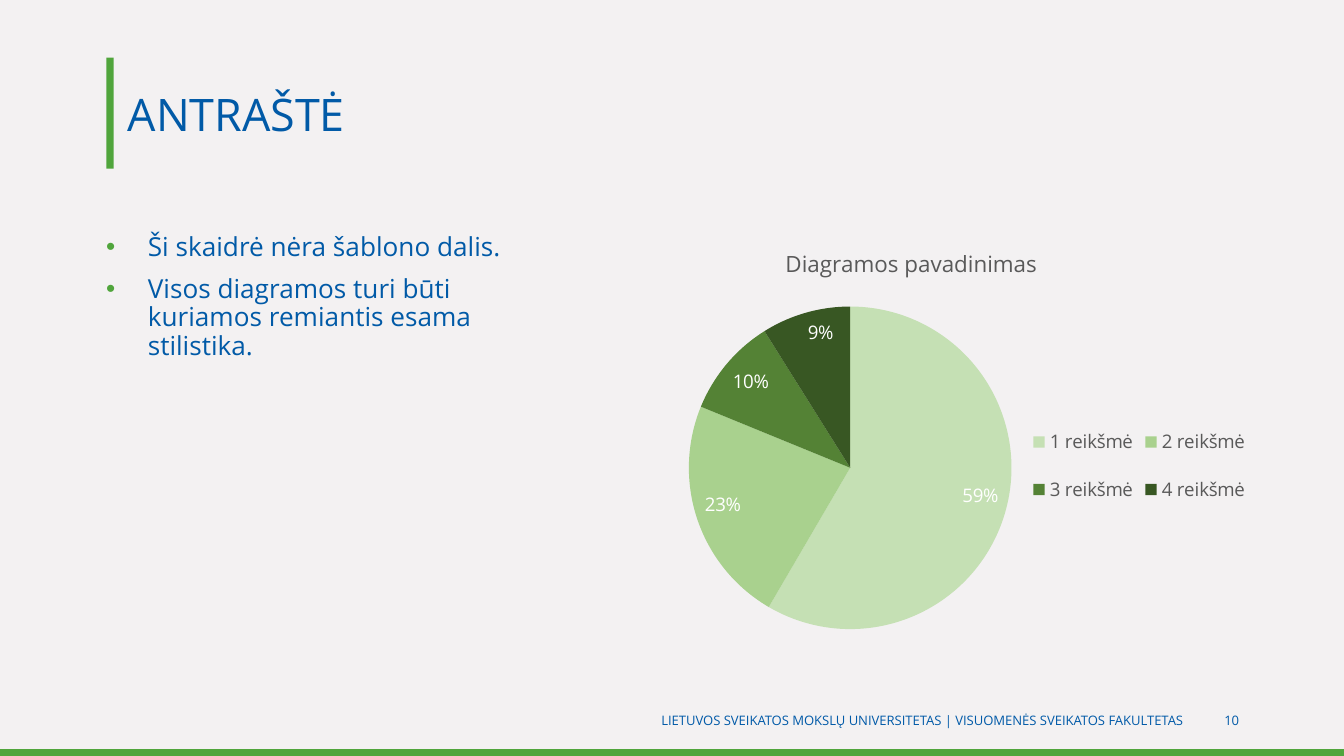
from lxml import etree
from pptx import Presentation
from pptx import util as u
from pptx.chart.data import CategoryChartData
from pptx.dml.color import RGBColor
from pptx.enum import chart as charts, shapes, text
from pptx.oxml import parse_xml
from pptx.oxml.ns import nsdecls, qn

COLORS = {
    "page": "F3F1F2", "green": "50A53C", "blue": "015AA7",
    "footer": "015AA8", "gray": "595959", "white": "FFFFFF",
}
SLICES = {
    "1 reikšmė": (59, "C5E0B4"),
    "2 reikšmė": (23, "A9D18E"),
    "3 reikšmė": (10, "548235"),
    "4 reikšmė": (9, "385723"),
}
CHART_TITLE = "Diagramos pavadinimas"


def paint(fill, color):
    fill.solid()
    fill.fore_color.rgb = RGBColor.from_string(color)


def style_font(font, size, color):
    font.name = "Open Sans"
    font.size = u.Pt(size)
    font.bold = False
    font.color.rgb = RGBColor.from_string(color)


def write(box, lines, size, color, align=text.PP_ALIGN.LEFT,
          anchor=text.MSO_ANCHOR.MIDDLE, bullet=None, gap=0, spacing=None):
    """Fill a box with one paragraph for each line."""
    frame = box.text_frame
    frame.word_wrap = True
    frame.auto_size = text.MSO_AUTO_SIZE.NONE
    frame.vertical_anchor = anchor
    for index, line in enumerate(lines):
        para = frame.add_paragraph() if index else frame.paragraphs[0]
        para.alignment = align
        para.space_before = u.Pt(gap if index else 0)
        if spacing:
            para.line_spacing = spacing
        if bullet:
            add_bullet(para, bullet)
        span = para.add_run()
        span.text = line
        style_font(span.font, size, color)


def add_bullet(para, color):
    props = para._p.get_or_add_pPr()
    indent = u.Cm(0.79)
    props.set("marL", str(indent))
    props.set("indent", str(-indent))
    mark = etree.SubElement(props, qn("a:buClr"))
    etree.SubElement(mark, qn("a:srgbClr"), val=color)
    etree.SubElement(props, qn("a:buChar"), char="•")


def manual_layout(x, y, width, height, inner=False):
    target = '<c:layoutTarget val="inner"/>' if inner else ""
    return parse_xml(
        f'<c:layout {nsdecls("c")}><c:manualLayout>{target}'
        '<c:xMode val="edge"/><c:yMode val="edge"/>'
        f'<c:x val="{x}"/><c:y val="{y}"/><c:w val="{width}"/><c:h val="{height}"/>'
        '</c:manualLayout></c:layout>')


class SlideBuilder:
    def __init__(self, deck):
        self.page = deck.slides.add_slide(deck.slide_layouts[1])
        paint(self.page.background.fill, COLORS["page"])

    def bar(self, left, top, width, height):
        bar = self.page.shapes.add_shape(
            shapes.MSO_SHAPE.RECTANGLE, *map(u.Cm, (left, top, width, height)))
        bar.shadow.inherit = False
        paint(bar.fill, COLORS["green"])
        bar.line.fill.background()

    def placeholder(self, index, place, lines, **style):
        box = self.page.placeholders[index]
        box.left, box.top, box.width, box.height = map(u.Cm, place)
        write(box, lines, color=COLORS["blue"], **style)

    def footer(self, left, width, line):
        box = self.page.shapes.add_textbox(*map(u.Cm, (left, 13.23, width, 0.76)))
        write(box, [line], 7, COLORS["footer"], align=text.PP_ALIGN.RIGHT)

    def pie(self, place):
        data = CategoryChartData(number_format='0"%"')
        data.categories = list(SLICES)
        data.add_series(CHART_TITLE, [value for value, _ in SLICES.values()])
        chart = self.page.shapes.add_chart(
            charts.XL_CHART_TYPE.PIE, *map(u.Cm, place), data).chart
        style_font(chart.font, 10, COLORS["gray"])

        # Title
        chart.has_title = True
        chart.chart_title.include_in_layout = False
        span = chart.chart_title.text_frame.paragraphs[0].add_run()
        span.text = CHART_TITLE
        style_font(span.font, 12, COLORS["gray"])

        # Slices and labels
        plot = chart.plots[0]
        plot.vary_by_categories = True
        for index, (_, color) in enumerate(SLICES.values()):
            paint(plot.series[0].points[index].format.fill, color)
        plot.has_data_labels = True
        labels = plot.data_labels
        labels.show_value = True
        labels.show_percentage = False
        labels.number_format = '0"%"'
        labels.number_format_is_linked = False
        labels.position = charts.XL_LABEL_POSITION.INSIDE_END
        style_font(labels.font, 10, COLORS["white"])

        # Legend in two columns, and the pie's own area
        chart.has_legend = True
        legend = chart.legend
        legend.position = charts.XL_LEGEND_POSITION.RIGHT
        legend.include_in_layout = False
        style_font(legend.font, 10, COLORS["gray"])
        legend._element.find(qn("c:legendPos")).addnext(
            manual_layout(0.67, 0.43, 0.33, 0.28))
        area = chart._chartSpace.chart.plotArea
        for layout in area.findall(qn("c:layout")):
            area.remove(layout)
        area.insert(0, manual_layout(0.17, 0.19, 0.48, 0.77, inner=True))


def main():
    deck = Presentation()
    deck.slide_width, deck.slide_height = u.Cm(25.4), u.Cm(14.29)
    slide = SlideBuilder(deck)

    # Green bars
    slide.bar(0, 14.16, 25.4, 0.13)
    slide.bar(2.01, 1.09, 0.14, 2.1)

    # Title and list
    slide.placeholder(0, (2.16, 1.09, 21.49, 2.1), ["ANTRAŠTĖ"], size=24)
    slide.placeholder(
        1, (1.75, 4.29, 8.2, 7.92),
        ["Ši skaidrė nėra šablono dalis.",
         "Visos diagramos turi būti kuriamos remiantis esama stilistika."],
        size=14, anchor=text.MSO_ANCHOR.TOP, bullet=COLORS["green"],
        gap=7.5, spacing=0.9)

    # Chart
    slide.pie((10.8, 4.29, 12.85, 7.92))

    # Footer and page number
    slide.footer(4.27, 18.34,
                 "LIETUVOS SVEIKATOS MOKSLŲ UNIVERSITETAS | VISUOMENĖS SVEIKATOS FAKULTETAS")
    slide.footer(22.76, 0.91, "10")

    deck.save("out.pptx")


if __name__ == "__main__":
    main()
